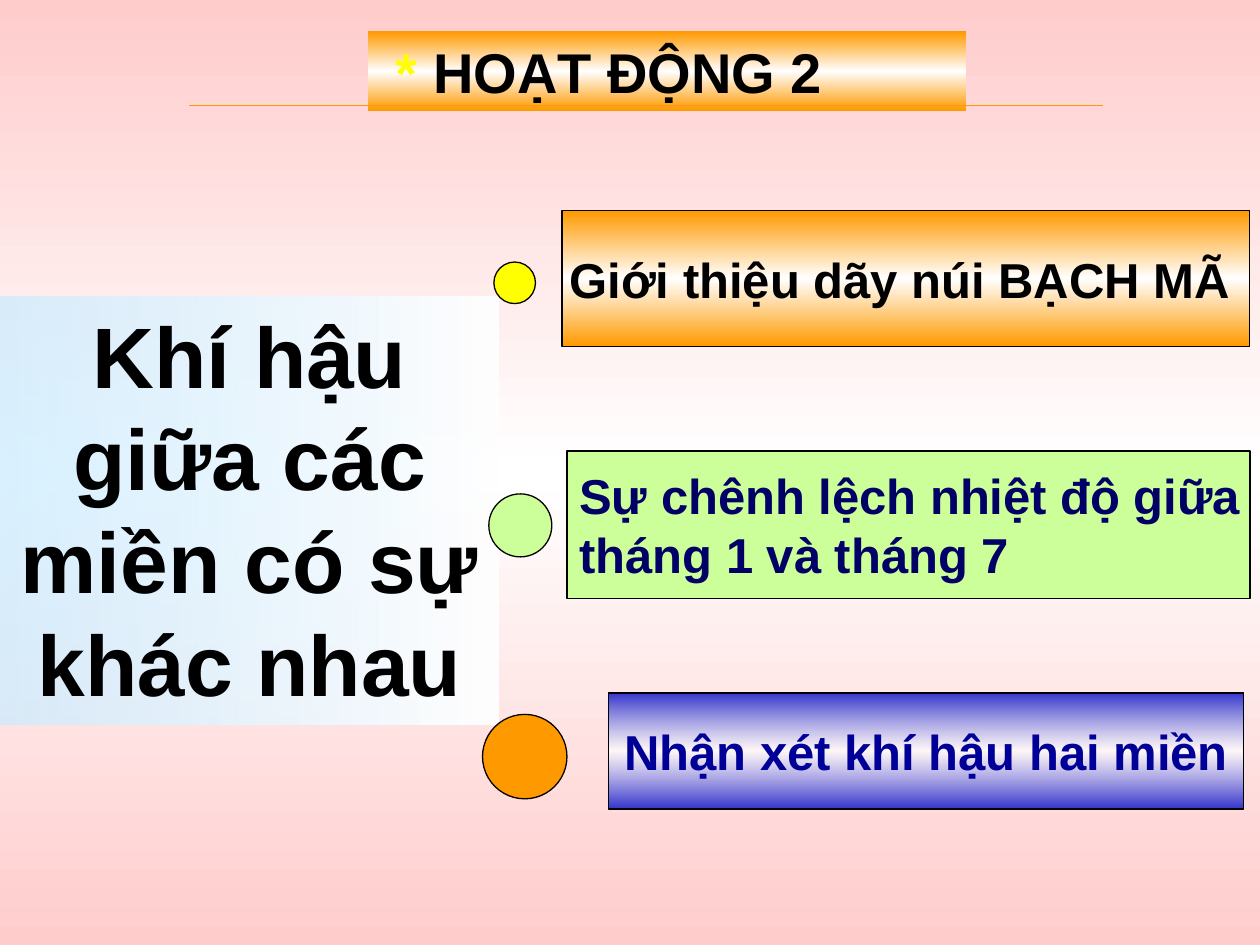
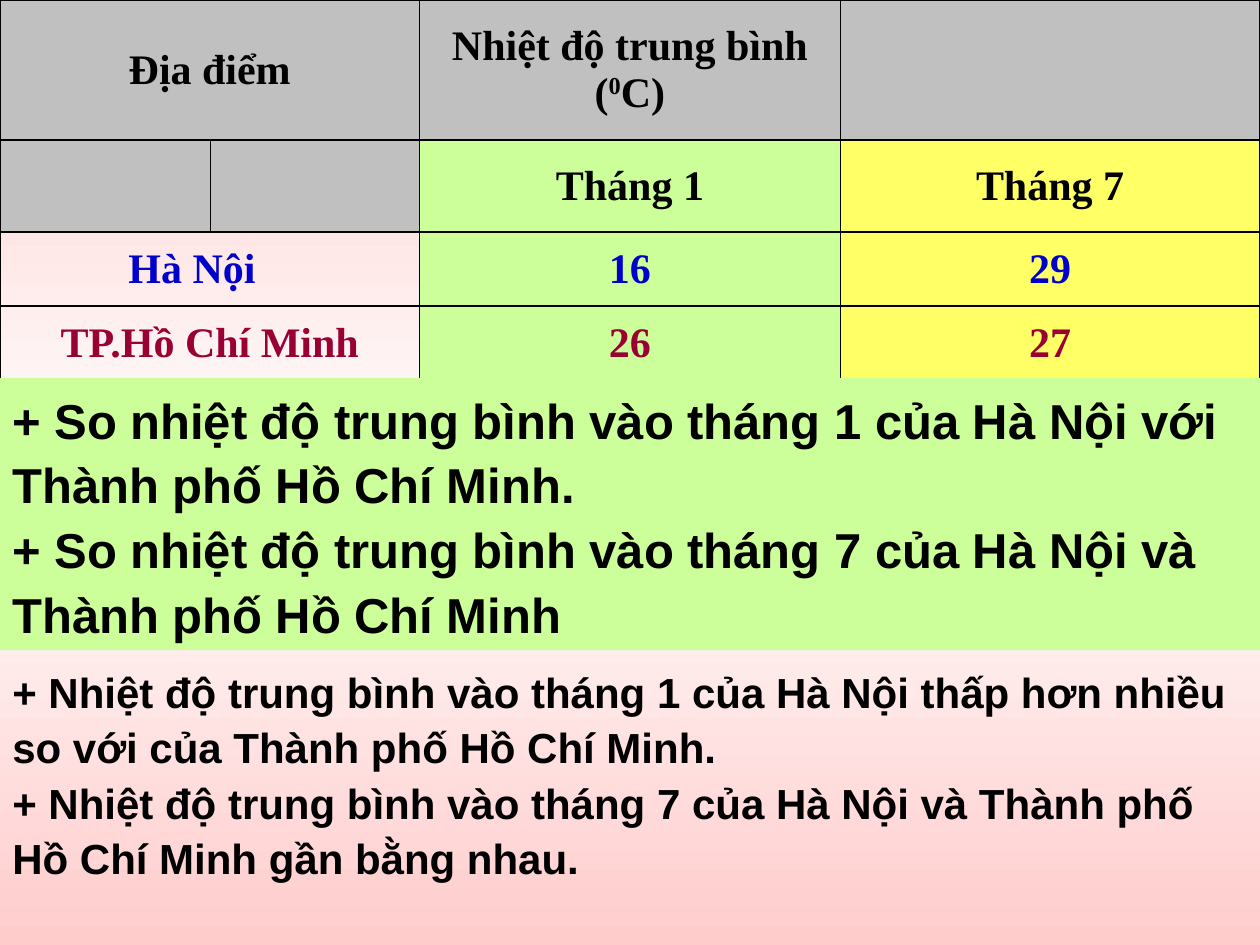
import lxml.etree
import pptx
import pptx.dml.color
import pptx.enum.shapes
import pptx.enum.text
import pptx.oxml.ns
import pptx.util

Inches = pptx.util.Inches
ALIGN = pptx.enum.text.PP_ALIGN
ANCHOR = pptx.enum.text.MSO_ANCHOR
SHAPE = pptx.enum.shapes.MSO_SHAPE
qn = pptx.oxml.ns.qn

COLORS = {
    "black": "000000", "white": "FFFFFF", "pink": "FFCCCC", "orange": "FF9900",
    "yellow": "FFFF00", "pale_yellow": "FFFF66", "green": "CCFF99", "sky": "CCECFF",
    "indigo": "3333CC", "navy": "000066", "dark_blue": "000099", "blue": "0000CC",
    "crimson": "990033", "gray": "C0C0C0",
}
PINK_BAND = [(0, "pink", 100), (50, "white", 100), (100, "pink", 100)]
ORANGE_BAND = [(0, "orange", 100), (50, "white", 100), (100, "orange", 100)]
INDIGO_BAND = [(0, "indigo", 100), (50, "white", 75), (100, "indigo", 100)]
SKY_FADE = [(0, "sky", 73), (100, "white", 100)]


def rgb(name):
    """Return the named colour as an RGB value."""
    return pptx.dml.color.RGBColor.from_string(COLORS[name])


def set_gradient(fill, element, stops, angle):
    """Give a fill the listed (position, colour, opacity) stops."""
    fill.gradient()
    fill.gradient_angle = angle
    stop_list = next(element.iter(qn("a:gsLst")))
    for stop in list(stop_list):
        stop_list.remove(stop)
    for position, color, opacity in stops:
        stop = lxml.etree.SubElement(stop_list, qn("a:gs"), pos=str(position * 1000))
        value = lxml.etree.SubElement(stop, qn("a:srgbClr"), val=COLORS[color])
        if opacity < 100:
            lxml.etree.SubElement(value, qn("a:alpha"), val=str(opacity * 1000))


def add_slide(presentation):
    """Add a blank slide with the shared pink background."""
    slide = presentation.slides.add_slide(presentation.slide_layouts[6])
    set_gradient(slide.background.fill, slide.element, PINK_BAND, 90)
    return slide


def add_block(slide, box, fill, outlined=False, kind=SHAPE.RECTANGLE, angle=90):
    """Add a shape filled with a named colour or a list of gradient stops."""
    shape = slide.shapes.add_shape(kind, *map(Inches, box))
    shape.shadow.inherit = False
    if isinstance(fill, str):
        shape.fill.solid()
        shape.fill.fore_color.rgb = rgb(fill)
    else:
        set_gradient(shape.fill, shape.element, fill, angle)
    if outlined:
        shape.line.color.rgb = rgb("black")
        shape.line.width = pptx.util.Pt(0.75)
    else:
        shape.line.fill.background()
    return shape


def add_run(paragraph, text, size, color="black", font="Arial"):
    """Add one bold run to a paragraph."""
    run = paragraph.add_run()
    run.text = text
    run.font.name = font
    run.font.size = pptx.util.Pt(size)
    run.font.bold = True
    run.font.color.rgb = rgb(color)
    return run


def write_lines(shape, lines, size, color="black", align=ALIGN.LEFT,
                anchor=ANCHOR.TOP, wrap=True, spacing=None):
    """Write each line as one paragraph of the shape."""
    frame = shape.text_frame
    frame.word_wrap = wrap
    frame.vertical_anchor = anchor
    for index, line in enumerate(lines):
        paragraph = frame.add_paragraph() if index else frame.paragraphs[0]
        paragraph.alignment = align
        if spacing:
            paragraph.line_spacing = spacing
        add_run(paragraph, line, size, color)


def add_title(slide, box):
    """Add the title band and the rule that crosses it."""
    band = add_block(slide, box, ORANGE_BAND)
    frame = band.text_frame
    frame.word_wrap = True
    frame.vertical_anchor = ANCHOR.TOP
    frame.margin_left = Inches(0.22)
    paragraph = frame.paragraphs[0]
    paragraph.alignment = ALIGN.LEFT
    add_run(paragraph, "* ", 32, "yellow")
    add_run(paragraph, "HOẠT ĐỘNG 2", 32)
    left, top = box[0] - 1.42, box[1] + 0.59
    rule = slide.shapes.add_connector(
        pptx.enum.shapes.MSO_CONNECTOR.STRAIGHT,
        Inches(left), Inches(top), Inches(left + 7.25), Inches(top))
    rule.line.color.rgb = rgb("orange")
    rule.line.width = pptx.util.Pt(0.75)
    lxml.etree.SubElement(rule.element.spPr, qn("a:effectLst"))


def add_theme(slide, box):
    """Add the large statement on the left."""
    panel = add_block(slide, box, SKY_FADE, angle=0)
    write_lines(panel, ["Khí hậu giữa các miền có sự khác nhau"], 49, align=ALIGN.CENTER)


def add_topics(slide, box):
    """Add the three topics, each a growing dot and a panel."""
    left, top = box[:2]
    topics = [
        ((0.09, 0.41, 0.33), "yellow", (0.63, 0, 5.46, 1.08), ORANGE_BAND,
         ["Giới thiệu dãy núi BẠCH MÃ"], "black", ALIGN.CENTER),
        ((0.05, 2.25, 0.5), "green", (0.67, 1.91, 5.42, 1.17), "green",
         ["Sự chênh lệch nhiệt độ giữa", "tháng 1 và tháng 7"], "navy", ALIGN.LEFT),
        ((0, 4, 0.67), "orange", (1, 3.83, 5.04, 0.92), INDIGO_BAND,
         ["Nhận xét khí hậu hai miền"], "dark_blue", ALIGN.CENTER),
    ]
    for dot, dot_color, area, fill, lines, color, align in topics:
        x, y, size = dot
        add_block(slide, (left + x, top + y, size, size), dot_color, True, SHAPE.OVAL)
        x, y, width, height = area
        panel = add_block(slide, (left + x, top + y, width, height), fill, True)
        write_lines(panel, lines, 28, color, align, ANCHOR.MIDDLE, wrap=False)
        if color == "black":
            panel.text_frame.margin_left = Inches(0.05)
            panel.text_frame.margin_right = Inches(0.15)


def style_cell(cell, fill):
    """Give a cell black borders and a plain fill or none."""
    properties = cell._tc.get_or_add_tcPr()
    for side in ("a:lnL", "a:lnR", "a:lnT", "a:lnB"):
        line = lxml.etree.SubElement(properties, qn(side), w="12700")
        solid = lxml.etree.SubElement(line, qn("a:solidFill"))
        lxml.etree.SubElement(solid, qn("a:srgbClr"), val=COLORS["black"])
    if fill:
        cell.fill.solid()
        cell.fill.fore_color.rgb = rgb(fill)
    else:
        cell.fill.background()
    cell.vertical_anchor = ANCHOR.MIDDLE


def add_temperature_table(slide, box):
    """Add the table of mean temperatures by place and month."""
    rows = [
        ["Địa điểm", "", ("Nhiệt độ trung bình (", "0", "C)"), ""],
        ["", "", "Tháng 1", "Tháng 7"],
        ["Hà Nội", "", "16", "29"],
        ["TP.Hồ Chí Minh", "", "26", "27"],
    ]
    fills = [["gray"] * 4, ["gray", "gray", "green", "pale_yellow"]]
    fills += [[None, None, "green", "pale_yellow"]] * 2
    text_colors = ["black", "black", "blue", "crimson"]
    table = slide.shapes.add_table(4, 4, *map(Inches, box)).table
    table.first_row = table.horz_banding = False
    for column, width in zip(table.columns, (1.67, 1.66, 3.34, 3.33)):
        column.width = Inches(width)
    for row, height in zip(table.rows, (1.11, 0.73, 0.59, 0.59)):
        row.height = Inches(height)
    for r, values in enumerate(rows):
        for c, value in enumerate(values):
            cell = table.cell(r, c)
            style_cell(cell, fills[r][c])
            if not value:
                continue
            paragraph = cell.text_frame.paragraphs[0]
            paragraph.alignment = ALIGN.CENTER
            parts = [value] if isinstance(value, str) else value
            for index, part in enumerate(parts):
                run = add_run(paragraph, part, 24, text_colors[r], "Times New Roman")
                if index == 1:
                    run.font._element.set("baseline", "30000")
    for r in (0, 2, 3):
        table.cell(r, 0).merge(table.cell(r, 1))
    hanoi = table.cell(2, 0)
    hanoi.margin_left = Inches(1.02)
    hanoi.text_frame.paragraphs[0].alignment = ALIGN.LEFT


def add_questions(slide, box):
    """Add the green panel of comparison questions."""
    panel = add_block(slide, box, "green")
    write_lines(panel, [
        "+ So nhiệt độ trung bình vào tháng 1 của Hà Nội với Thành phố Hồ Chí Minh.",
        "+ So nhiệt độ trung bình vào tháng 7 của Hà Nội và Thành phố Hồ Chí Minh",
    ], 28, spacing=1.1)


def add_answers(slide, box):
    """Add the answers to the comparison questions."""
    answers = slide.shapes.add_textbox(*map(Inches, box))
    write_lines(answers, [
        "+ Nhiệt độ trung bình vào tháng 1 của Hà Nội thấp hơn nhiều so với của "
        "Thành phố Hồ Chí Minh.",
        "+ Nhiệt độ trung bình vào tháng 7 của Hà Nội và Thành phố Hồ Chí Minh "
        "gần bằng nhau.",
    ], 24, spacing=1.1)


def main():
    """Build and save both slides."""
    presentation = pptx.Presentation()
    presentation.slide_width = Inches(10)
    presentation.slide_height = Inches(7.5)

    activity = add_slide(presentation)
    add_title(activity, (2.92, 0.25, 4.75, 0.63))
    add_theme(activity, (0, 2.35, 3.96, 3.4))
    add_topics(activity, (3.83, 1.67, 6.09, 4.75))

    comparison = add_slide(presentation)
    add_temperature_table(comparison, (0, 0, 10, 3.02))
    add_questions(comparison, (0, 3, 10, 2.16))
    add_answers(comparison, (0, 5.2, 10, 2.3))

    presentation.save("out.pptx")


if __name__ == "__main__":
    main()
